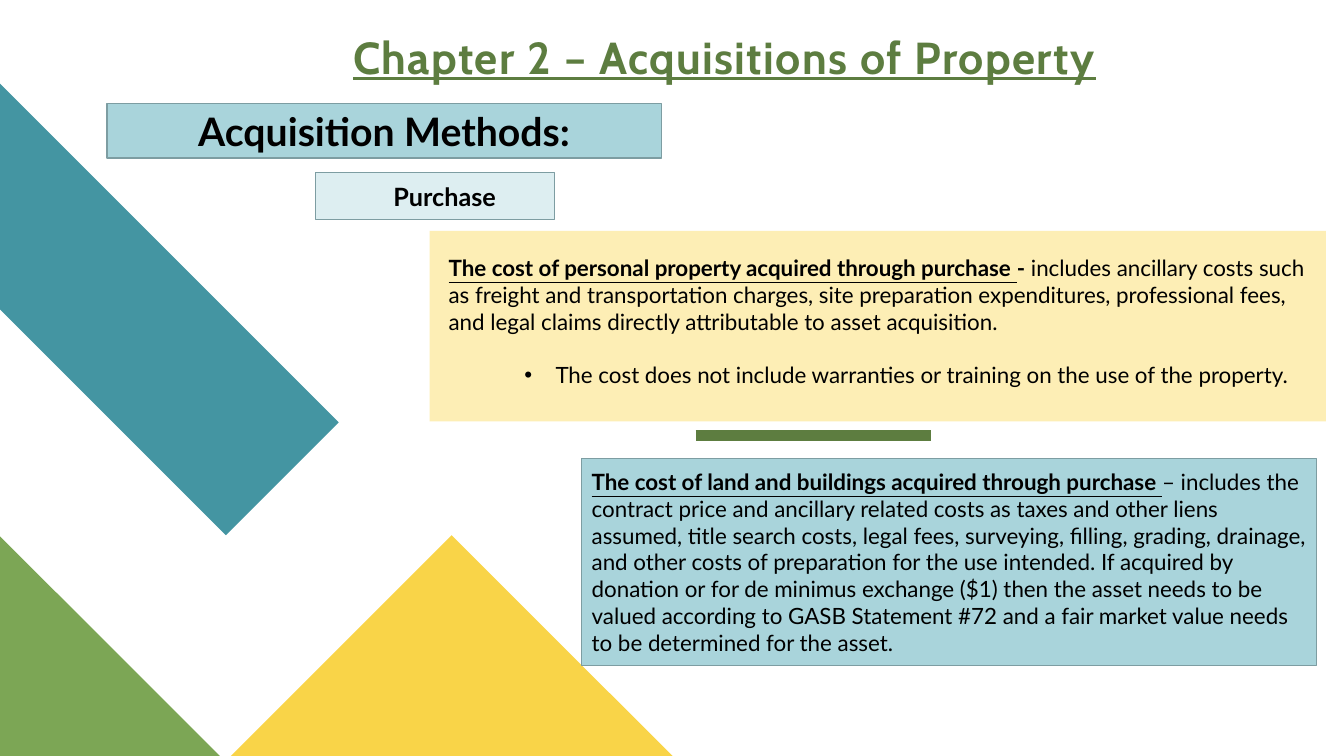
import pptx
import pptx.util
import pptx.dml.color
import pptx.enum.shapes
import pptx.enum.text
import pptx.oxml
import pptx.oxml.ns
from dataclasses import dataclass

Inches = pptx.util.Inches
Pt = pptx.util.Pt
ALIGN = pptx.enum.text.PP_ALIGN
ANCHOR = pptx.enum.text.MSO_ANCHOR


@dataclass(frozen=True)
class Theme:
    teal: str = "4495A2"
    leaf: str = "7CA655"
    gold: str = "F9D448"
    moss: str = "5D7D40"
    cream: str = "FDEEB5"
    pale: str = "DDEEF1"
    sky: str = "A9D4DB"
    edge: str = "7D9DA2"
    ink: str = "000000"
    head: str = "Cabin"
    text: str = "Lato"
    title: int = 32
    band: int = 28
    label: int = 18
    body: int = 16


THEME = Theme()


def color(code):
    return pptx.dml.color.RGBColor.from_string(code)


def paint(shape, code):
    shape.fill.solid()
    shape.fill.fore_color.rgb = color(code)


def place(shape, box):
    shape.left, shape.top, shape.width, shape.height = map(Inches, box)


def element(tag, attrs=""):
    space = pptx.oxml.ns.nsdecls("a")
    return pptx.oxml.parse_xml(f"<a:{tag} {space} {attrs}/>")


def add_run(para, text, size, bold=False, under=False,
            face=THEME.text, code=THEME.ink):
    run = para.add_run()
    run.text = text
    font = run.font
    font.name, font.size = face, Pt(size)
    font.bold, font.underline = bold, under
    font.color.rgb = color(code)
    return run


def indent(para, left, first=0):
    props = para._p.get_or_add_pPr()
    props.set("marL", str(Inches(left)))
    props.set("indent", str(Inches(first)))
    return props


def set_frame(shape, anchor, inset=None):
    frame = shape.text_frame
    frame.word_wrap = True
    frame.auto_size = pptx.enum.text.MSO_AUTO_SIZE.NONE
    frame.vertical_anchor = anchor
    if inset:
        (frame.margin_left, frame.margin_top,
         frame.margin_right, frame.margin_bottom) = map(Inches, inset)
    return frame


def add_area(slide, points, fill):
    spots = [(Inches(x), Inches(y)) for x, y in points]
    build = slide.shapes.build_freeform(*spots[0])
    build.add_line_segments(spots[1:], close=True)
    area = build.convert_to_shape()
    area.shadow.inherit = False
    paint(area, fill)
    area.line.fill.background()


def add_rule(slide, start, end):
    kind = pptx.enum.shapes.MSO_CONNECTOR.STRAIGHT
    rule = slide.shapes.add_connector(kind, *map(Inches, start + end))
    rule.line.color.rgb = color(THEME.moss)
    rule.line.width = Pt(8)
    rule._element.spPr.append(element("effectLst"))


def add_box(slide, box, fill, runs, size, align=ALIGN.CENTER, left=0):
    kind = pptx.enum.shapes.MSO_SHAPE.RECTANGLE
    shape = slide.shapes.add_shape(kind, *map(Inches, box))
    shape.shadow.inherit = False
    paint(shape, fill)
    shape.line.color.rgb = color(THEME.edge)
    shape.line.width = Pt(1)
    para = set_frame(shape, ANCHOR.MIDDLE).paragraphs[0]
    para.alignment = align
    indent(para, left)
    for text, bold, under in runs:
        add_run(para, text, size, bold, under)


def set_title(slide, text):
    title = slide.shapes.title
    place(title, (2.81, 0.28, 8.75, 0.54))
    para = set_frame(title, ANCHOR.BOTTOM, (0, 0, 0, 0)).paragraphs[0]
    para.alignment = ALIGN.CENTER
    para.line_spacing = 0.8
    run = add_run(para, text, THEME.title, True, True, THEME.head, THEME.moss)
    run._r.get_or_add_rPr().set("spc", "100")


def set_body(slide, runs, point):
    body = slide.placeholders[1]
    place(body, (4.26, 2.29, 8.89, 1.89))
    paint(body, THEME.cream)
    frame = set_frame(body, ANCHOR.TOP, (0, 0.23, 0, 0))
    lead, item = frame.paragraphs[0], frame.add_paragraph()
    lead.space_before = Pt(0)
    indent(lead, 0.19).append(element("buNone"))
    for text, bold, under in runs:
        add_run(lead, text, THEME.body, bold, under)
    item.level = 1
    item.space_before = Pt(19)
    props = indent(item, 1.25, -0.31)
    props.append(element("buFont", 'typeface="Arial"'))
    props.append(element("buChar", 'char="•"'))
    add_run(item, point, THEME.body)


def main():
    deck = pptx.Presentation()
    deck.slide_width, deck.slide_height = Inches(13.33), Inches(7.5)
    slide = deck.slides.add_slide(deck.slide_layouts[1])

    add_area(slide, [(0, 0.83), (0, 3.07), (2.24, 5.31), (3.36, 4.19)],
             THEME.teal)
    add_area(slide, [(0, 5.32), (0, 7.5), (2.18, 7.5)], THEME.leaf)
    add_area(slide, [(6.67, 7.5), (4.48, 5.31), (2.29, 7.5)], THEME.gold)
    add_rule(slide, (6.9, 4.32), (9.23, 4.32))

    set_title(slide, "Chapter 2 – Acquisitions of Property")
    set_body(slide, [
        ("The cost of personal property acquired through purchase ",
         True, True),
        ("-", True, False),
        (" includes ancillary costs such as freight and transportation "
         "charges, site preparation expenditures, professional fees, and "
         "legal claims directly attributable to asset acquisition.",
         False, False),
    ], "The cost does not include warranties or training on the use of "
       "the property.")

    add_box(slide, (3.13, 1.71, 2.37, 0.47), THEME.pale,
            [("Purchase", True, False)], THEME.label, left=0.19)
    add_box(slide, (5.77, 4.55, 7.29, 2.05), THEME.sky, [
        ("The cost of land and buildings acquired through purchase ",
         True, True),
        ("– includes the contract price and ancillary related costs as "
         "taxes and other liens assumed, title search costs, legal fees, "
         "surveying, filling, grading, drainage, and other costs of "
         "preparation for the use intended. If acquired by donation or for "
         "de minimus exchange ($1) then the asset needs to be valued "
         "according to GASB Statement #72 and a fair market value needs to "
         "be determined for the asset.", False, False),
    ], THEME.body, ALIGN.LEFT)
    add_box(slide, (1.06, 1.03, 5.5, 0.54), THEME.sky,
            [("Acquisition Methods:", True, False)], THEME.band)

    deck.save("out.pptx")


if __name__ == "__main__":
    main()
